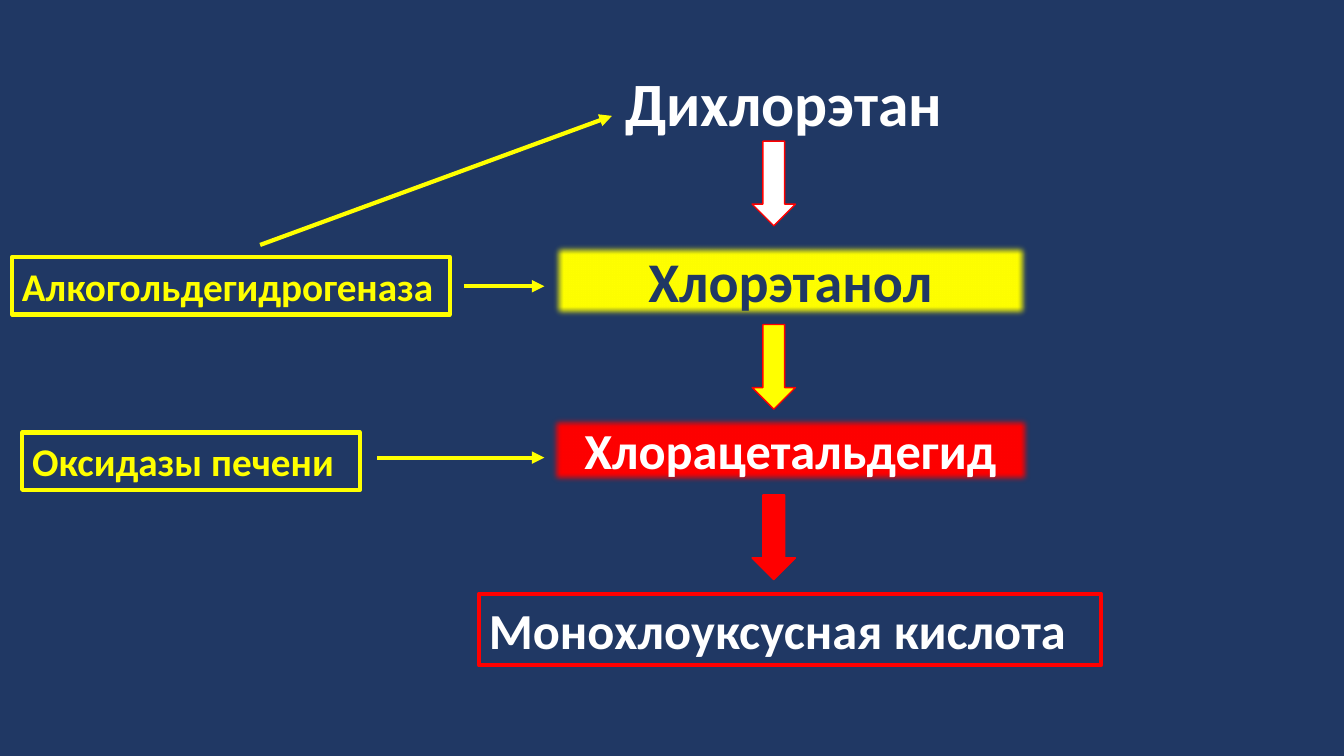
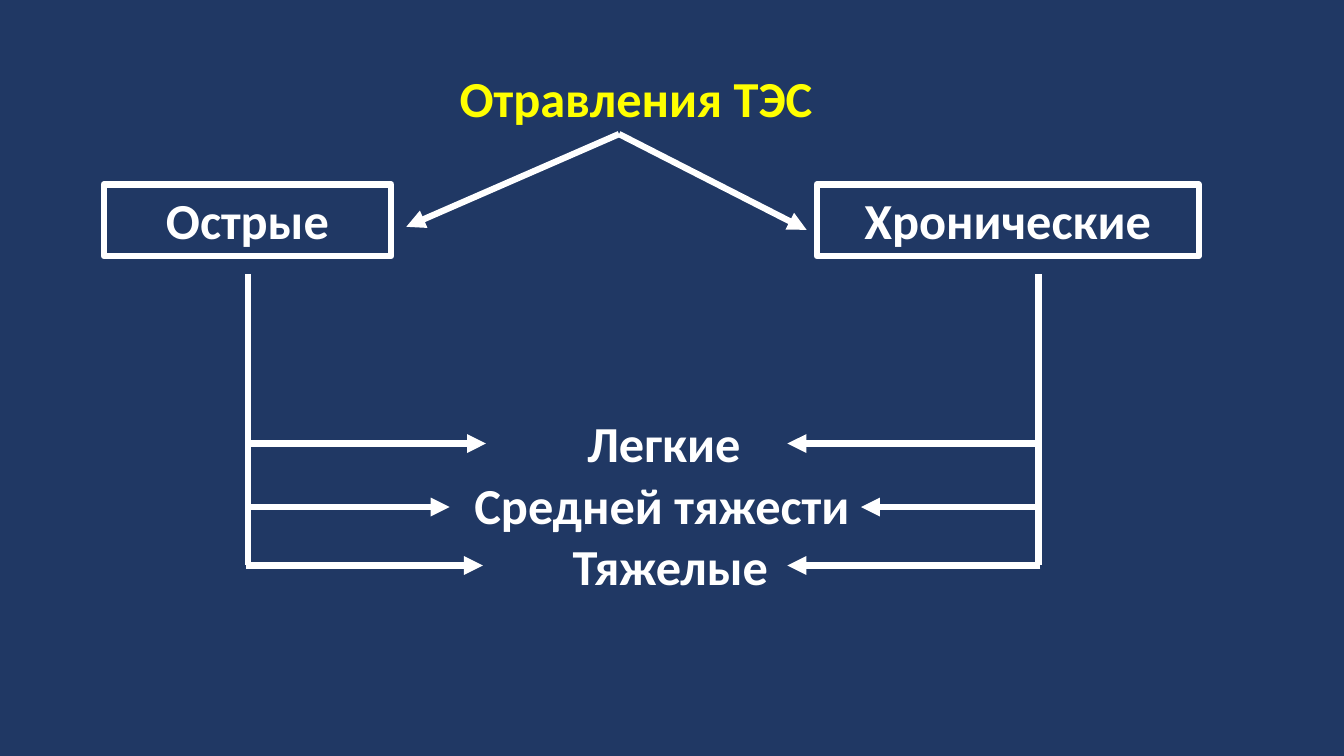
from lxml import etree
from pptx import Presentation
from pptx.dml.color import RGBColor
from pptx.enum.shapes import MSO_CONNECTOR, MSO_SHAPE
from pptx.enum.text import MSO_AUTO_SIZE, PP_ALIGN
from pptx.oxml.ns import qn
from pptx.util import Emu, Pt

PX = 9144  # 100 px to the inch
SLIDE_WIDTH, SLIDE_HEIGHT = 1333, 750
NAVY = RGBColor(0x20, 0x38, 0x64)
WHITE = RGBColor(0xFF, 0xFF, 0xFF)
YELLOW = RGBColor(0xFF, 0xFF, 0x00)
RED = RGBColor(0xFF, 0x00, 0x00)
FONT = "Calibri"
SOFT_RADIUS = 7
LEFT, CENTER = PP_ALIGN.LEFT, PP_ALIGN.CENTER
FIT_TEXT = MSO_AUTO_SIZE.SHAPE_TO_FIT_TEXT
DOWN_ARROW = MSO_SHAPE.DOWN_ARROW
STRAIGHT = MSO_CONNECTOR.STRAIGHT


def px(*lengths):
    return [Emu(length * PX) for length in lengths]


def new_slide(deck):
    slide = deck.slides.add_slide(deck.slide_layouts[6])
    slide.background.fill.solid()
    slide.background.fill.fore_color.rgb = NAVY
    return slide


def add_label(slide, box, text, size=36, color=WHITE, align=CENTER,
              fill=None, border=None, border_width=3, soft=False):
    label = slide.shapes.add_textbox(*px(*box))
    frame = label.text_frame
    frame.word_wrap = True
    frame.auto_size = FIT_TEXT
    frame.text = text
    paragraph = frame.paragraphs[0]
    paragraph.alignment = align
    font = paragraph.runs[0].font
    font.name, font.size, font.bold = FONT, Pt(size), True
    font.color.rgb = color
    if fill is not None:
        label.fill.solid()
        label.fill.fore_color.rgb = fill
    if border is not None:
        label.line.color.rgb = border
        label.line.width = Pt(border_width)
    if soft:
        effects = etree.SubElement(label._element.spPr, qn("a:effectLst"))
        etree.SubElement(effects, qn("a:softEdge"), rad=str(SOFT_RADIUS * PX))


def add_line(slide, start, end, color, width, arrow=True):
    line = slide.shapes.add_connector(STRAIGHT, *px(*start, *end))
    line.line.color.rgb = color
    line.line.width = Pt(width)
    if arrow:
        etree.SubElement(line.line._get_or_add_ln(), qn("a:tailEnd"), type="triangle")
    etree.SubElement(line._element.spPr, qn("a:effectLst"))


def add_down_arrow(slide, box, fill):
    arrow = slide.shapes.add_shape(DOWN_ARROW, *px(*box))
    arrow.shadow.inherit = False
    arrow.fill.solid()
    arrow.fill.fore_color.rgb = fill
    arrow.line.color.rgb = RED
    arrow.line.width = Pt(1)


def metabolite_chain(slide, left, top):
    """Four substances, top to bottom, with block arrows between them."""
    add_label(slide, (left + 132, top, 341, 84), "Дихлорэтан", 44, fill=NAVY)
    add_label(slide, (left + 71, top + 181, 476, 77), "Хлорэтанол", 40, NAVY,
              fill=YELLOW, soft=True)
    add_label(slide, (left + 69, top + 352, 480, 71), "Хлорацетальдегид",
              fill=RED, soft=True)
    add_label(slide, (left, top + 530, 617, 71), "Монохлоуксусная кислота",
              align=LEFT, border=RED)
    for offset, fill in ((81, WHITE), (263, YELLOW), (432, RED)):
        add_down_arrow(slide, (left + 271, top + offset, 43, 84), fill)


def enzymes(slide, left, top):
    """Enzyme boxes with arrows to the substances they act on."""
    for x, y, width, name in ((0, 0, 434, "Алкогольдегидрогеназа"),
                              (10, 174, 335, "Оксидазы печени")):
        add_label(slide, (left + x, top + y, width, 57), name, 28, YELLOW,
                  align=LEFT, border=YELLOW)
    for x1, y1, x2, y2 in ((246, -12, 595, -140), (448, 29, 528, 29),
                           (362, 199, 528, 199)):
        add_line(slide, (left + x1, top + y1), (left + x2, top + y2), YELLOW, 3)


def poisoning_forms(slide, left, top):
    """Heading that branches into the two forms of poisoning."""
    add_label(slide, (left + 280, top, 496, 71), "Отравления ТЭС", color=YELLOW)
    fork = (left + 511, top + 71)
    for x, width, name, tip in ((0, 285, "Острые", (300, 163)),
                                (707, 379, "Хронические", (697, 166))):
        add_label(slide, (left + x, top + 121, width, 71), name,
                  border=WHITE, border_width=4.5)
        add_line(slide, fork, (left + tip[0], top + tip[1]), WHITE, 4.5)


def severity_levels(slide, left, top):
    """Degrees of severity, reached from a rail on either side."""
    right, bottom = left + 784, top + 289
    levels = ((133, 559, "Легкие", 168, 236, 535),
              (200, 421, "Средней тяжести", 231, 200, 608),
              (181, 487, "Тяжелые ", 289, 233, 535))
    for rail in (left, right):
        add_line(slide, (rail, top), (rail, bottom), WHITE, 4.5, arrow=False)
    for row, (x, width, name, y, left_tip, right_tip) in enumerate(levels):
        add_label(slide, (left + x, top + 132 + 61 * row, width, 71), name)
        for rail, tip in ((left - 2, left_tip), (right + 2, right_tip)):
            add_line(slide, (rail, top + y), (left + tip, top + y), WHITE, 4.5)


def main():
    deck = Presentation()
    deck.slide_width, deck.slide_height = px(SLIDE_WIDTH, SLIDE_HEIGHT)

    metabolism = new_slide(deck)
    metabolite_chain(metabolism, 475, 59)
    enzymes(metabolism, 12, 255)

    classification = new_slide(deck)
    poisoning_forms(classification, 103, 62)
    severity_levels(classification, 246, 272)

    deck.save("out.pptx")


if __name__ == "__main__":
    main()
